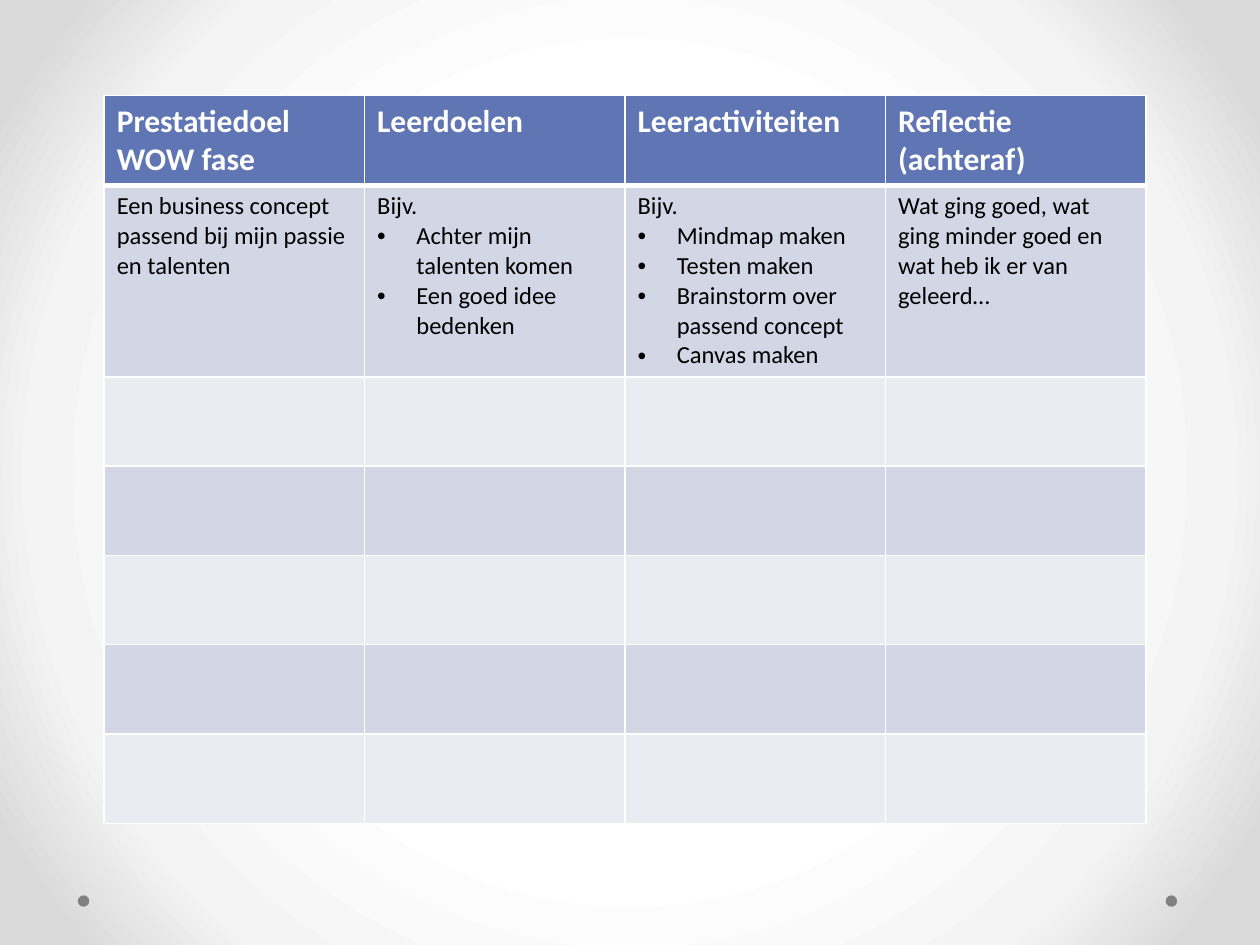
from dataclasses import dataclass

from lxml.etree import SubElement
from pptx import Presentation
from pptx.dml.color import RGBColor
from pptx.enum.shapes import MSO_SHAPE
from pptx.oxml import parse_xml
from pptx.oxml.ns import nsdecls, qn
from pptx.util import Cm, Pt


@dataclass(frozen=True)
class Theme:
    font: str = "Calibri"
    header_size: int = 18
    body_size: int = 14
    header_fill: str = "6076B4"
    dark_band: str = "D2D6E5"
    light_band: str = "EAECF2"
    header_text: str = "FFFFFF"
    body_text: str = "000000"
    rule: str = "FFFFFF"
    dot: str = "808080"
    glow: tuple = ((50, "FFFFFF"), (76, "F4F4F4"), (92, "DADADA"))


@dataclass(frozen=True)
class Box:
    left: float
    top: float
    width: float
    height: float


@dataclass(frozen=True)
class Entry:
    lines: tuple
    points: tuple = ()


THEME = Theme()
EMPTY_ROWS = 5
ROW_HEIGHT = 1.8
BULLET_INDENT = Cm(0.79)

HEADINGS = (
    Entry(("Prestatiedoel WOW fase",)),
    Entry(("Leerdoelen",)),
    Entry(("Leeractiviteiten",)),
    Entry(("Reflectie", "(achteraf)")),
)
EXAMPLE = (
    Entry(("Een business concept passend bij mijn passie en talenten",)),
    Entry(("Bijv.",), ("Achter mijn talenten komen", "Een goed idee bedenken")),
    Entry(("Bijv.",), ("Mindmap maken", "Testen maken",
                       "Brainstorm over passend concept", "Canvas maken")),
    Entry(("Wat ging goed, wat ging minder goed en wat heb ik er van geleerd…",)),
)


def paint_background(slide):
    stops = "".join(
        f'<a:gs pos="{position * 1000}"><a:srgbClr val="{color}"/></a:gs>'
        for position, color in THEME.glow
    )
    glow = parse_xml(
        f'<a:gradFill {nsdecls("a")} rotWithShape="1"><a:gsLst>{stops}</a:gsLst>'
        '<a:path path="circle"><a:fillToRect l="50000" t="50000" r="50000" b="50000"/>'
        '</a:path></a:gradFill>'
    )
    slide.background.fill.solid()
    properties = slide.element.find(".//" + qn("p:bgPr"))
    properties.replace(properties.find(qn("a:solidFill")), glow)


def add_corner_dots(slide, box):
    for left in (box.left, box.left + box.width - box.height):
        dot = slide.shapes.add_shape(
            MSO_SHAPE.OVAL, Cm(left), Cm(box.top), Cm(box.height), Cm(box.height))
        dot.shadow.inherit = False
        dot.fill.solid()
        dot.fill.fore_color.rgb = RGBColor.from_string(THEME.dot)
        dot.line.fill.background()


def add_bullet(paragraph):
    properties = paragraph._p.get_or_add_pPr()
    properties.set("marL", str(BULLET_INDENT))
    properties.set("indent", str(-BULLET_INDENT))
    SubElement(properties, qn("a:buFont"), typeface="Arial")
    SubElement(properties, qn("a:buChar"), char="•")


def write_entry(cell, entry, size, color, bold):
    frame = cell.text_frame
    for index, wording in enumerate(entry.lines + entry.points):
        paragraph = frame.add_paragraph() if index else frame.paragraphs[0]
        if index >= len(entry.lines):
            add_bullet(paragraph)
        run = paragraph.add_run()
        run.text = wording
        run.font.name = THEME.font
        run.font.size = Pt(size)
        run.font.bold = bold
        run.font.color.rgb = RGBColor.from_string(color)


def style_cell(cell, fill, top=1, bottom=1):
    properties = cell._tc.get_or_add_tcPr()
    for side, weight in (("L", 1), ("R", 1), ("T", top), ("B", bottom)):
        edge = SubElement(properties, qn(f"a:ln{side}"), w=str(Pt(weight)))
        paint = SubElement(edge, qn("a:solidFill"))
        SubElement(paint, qn("a:srgbClr"), val=THEME.rule)
    cell.fill.solid()
    cell.fill.fore_color.rgb = RGBColor.from_string(fill)


def add_goal_table(slide, box):
    row_count = 2 + EMPTY_ROWS
    table = slide.shapes.add_table(
        row_count, len(HEADINGS),
        Cm(box.left), Cm(box.top), Cm(box.width), Cm(box.height)).table
    for row_index, row in enumerate(table.rows):
        row.height = Cm(ROW_HEIGHT)
        band = THEME.dark_band if row_index % 2 else THEME.light_band
        for cell in row.cells:
            style_cell(cell, band if row_index else THEME.header_fill,
                       top=3 if row_index == 1 else 1,
                       bottom=1 if row_index else 3)
    for column, (heading, example) in enumerate(zip(HEADINGS, EXAMPLE)):
        write_entry(table.cell(0, column), heading,
                    THEME.header_size, THEME.header_text, True)
        write_entry(table.cell(1, column), example,
                    THEME.body_size, THEME.body_text, False)


def main():
    deck = Presentation()
    deck.slide_width, deck.slide_height = Cm(25.4), Cm(19.05)
    slide = deck.slides.add_slide(deck.slide_layouts[6])
    paint_background(slide)
    add_corner_dots(slide, Box(1.57, 18.05, 22.16, 0.23))
    add_goal_table(slide, Box(2.1, 1.93, 21, 14.6))
    deck.save("out.pptx")


if __name__ == "__main__":
    main()
